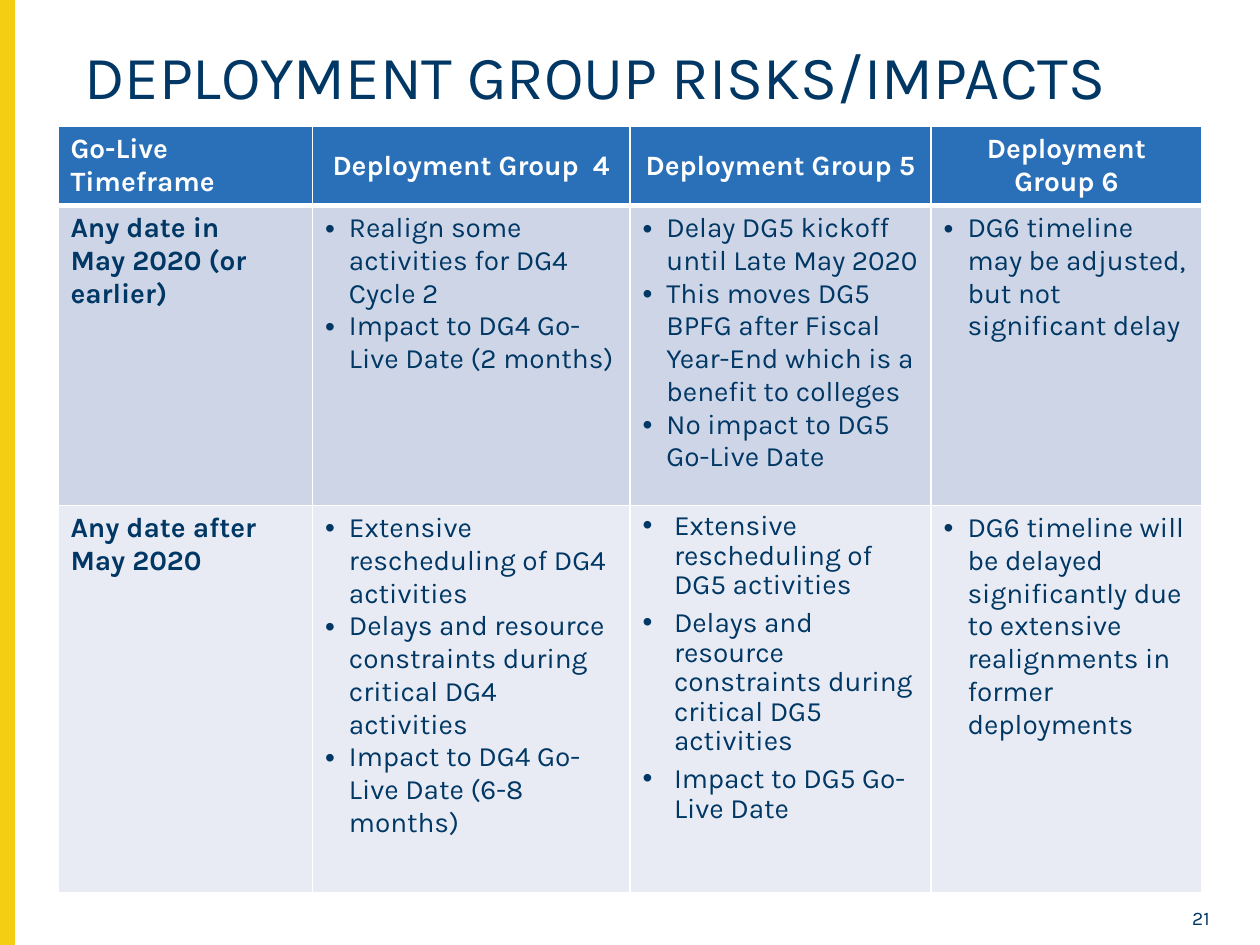
from pptx import Presentation
from pptx.dml.color import RGBColor as RGB
from pptx.enum.shapes import MSO_SHAPE as Shape
from pptx.enum.text import MSO_ANCHOR as Anchor, PP_ALIGN as Align
from pptx.oxml.ns import qn
from pptx.util import Inches, Pt
from lxml.etree import SubElement

FONT = "Karla"
COLORS = {
    "navy": "003764", "gold": "F4CE12", "white": "FFFFFF",
    "head": "2A70B8", "dark": "CDD5E6", "light": "E8EBF3",
}
COLS = [2.02, 2.52, 2.39, 2.15]
ROWS = [0.56, 2.38, 3.07]
HEADS = ["Go-Live Timeframe", "Deployment Group  4",
         "Deployment Group 5", "Deployment Group 6"]
BODY = [
    [["Any date in", "May 2020 (or earlier)"],
     ["Realign some activities for DG4 Cycle 2",
      "Impact to DG4 Go-Live Date (2 months)"],
     ["Delay DG5 kickoff until Late May 2020",
      "This moves DG5 BPFG after Fiscal Year-End which is a benefit to colleges",
      "No impact to DG5 Go-Live Date"],
     ["DG6 timeline may be adjusted, but not significant delay"]],
    [["Any date after", "May 2020"],
     ["Extensive rescheduling of DG4 activities",
      "Delays and resource constraints during critical DG4 activities",
      "Impact to DG4 Go-Live Date (6-8 months)"],
     ["Extensive rescheduling of DG5 activities",
      "Delays and resource constraints during critical DG5 activities",
      "Impact to DG5 Go-Live Date"],
     ["DG6 timeline will be delayed significantly due to extensive "
      "realignments in former deployments"]],
]


def color(name):
    return RGB.from_string(COLORS[name])


def write(frame, lines, size=16, ink="navy", bold=False, align=Align.LEFT,
          indent=0, space=None, before=0):
    """Fill a text frame, one paragraph a line; an indent adds bullets."""
    frame.word_wrap = True
    for i, line in enumerate(lines):
        para = frame.add_paragraph() if i else frame.paragraphs[0]
        para.alignment = align
        if space:
            para.line_spacing = space
        if before:
            para.space_before = Pt(before)
        if indent:
            props = para._p.get_or_add_pPr()
            props.set("marL", str(Inches(indent)))
            props.set("indent", str(-Inches(indent)))
            SubElement(props, qn("a:buFont"), typeface="Arial")
            SubElement(props, qn("a:buChar"), char="•")
        run = para.add_run()
        run.text = line
        font = run.font
        font.name, font.size, font.bold = FONT, Pt(size), bold
        font.color.rgb = color(ink)


def add_text(slide, box, text, **style):
    frame = slide.shapes.add_textbox(*map(Inches, box)).text_frame
    frame.vertical_anchor = Anchor.TOP
    write(frame, [text], **style)


def add_bar(slide, box):
    bar = slide.shapes.add_shape(Shape.RECTANGLE, *map(Inches, box))
    bar.shadow.inherit = False
    bar.fill.solid()
    bar.fill.fore_color.rgb = bar.line.color.rgb = color("gold")
    bar.line.width = Pt(1)


def paint(cell, fill, top=1, bottom=1):
    """Give a cell white borders and a solid fill."""
    props = cell._tc.get_or_add_tcPr()
    for side, width in zip("LRTB", (1, 1, top, bottom)):
        line = SubElement(props, qn(f"a:ln{side}"), w=str(Pt(width)))
        solid = SubElement(line, qn("a:solidFill"))
        SubElement(solid, qn("a:srgbClr"), val=COLORS["white"])
    cell.fill.solid()
    cell.fill.fore_color.rgb = color(fill)


def add_grid(slide, left, top):
    box = map(Inches, (left, top, sum(COLS), sum(ROWS)))
    grid = slide.shapes.add_table(len(ROWS), len(COLS), *box).table
    for col, width in zip(grid.columns, COLS):
        col.width = Inches(width)
    for row, height in zip(grid.rows, ROWS):
        row.height = Inches(height)

    # Header row
    for c, head in enumerate(HEADS):
        cell = grid.cell(0, c)
        paint(cell, "head", bottom=3)
        cell.vertical_anchor = Anchor.MIDDLE
        write(cell.text_frame, [head], ink="white", bold=True,
              align=Align.CENTER if c else Align.LEFT)

    # Body rows: bold timeframe, then bulleted impacts
    for r, row in enumerate(BODY, 1):
        for c, lines in enumerate(row):
            cell = grid.cell(r, c)
            paint(cell, "dark" if r == 1 else "light", top=3 if r == 1 else 1)
            if c == 0:
                style = {"bold": True}
            elif (r, c) == (2, 2):
                style = {"indent": 0.25, "space": 0.9, "before": 5}
            else:
                style = {"indent": 0.19}
            write(cell.text_frame, lines, **style)


def main():
    deck = Presentation()
    deck.slide_width, deck.slide_height = Inches(10), Inches(7.5)
    slide = deck.slides.add_slide(deck.slide_layouts[6])
    add_bar(slide, (0, 0, 0.11, 7.5))
    add_text(slide, (9.2, 7.14, 0.5, 0.21), "21", size=11, align=Align.RIGHT)
    add_text(slide, (0.57, 0.32, 9.08, 0.86), "DEPLOYMENT GROUP RISKS/IMPACTS",
             size=35, space=0.9)
    add_grid(slide, 0.46, 1)
    deck.save("out.pptx")


if __name__ == "__main__":
    main()
